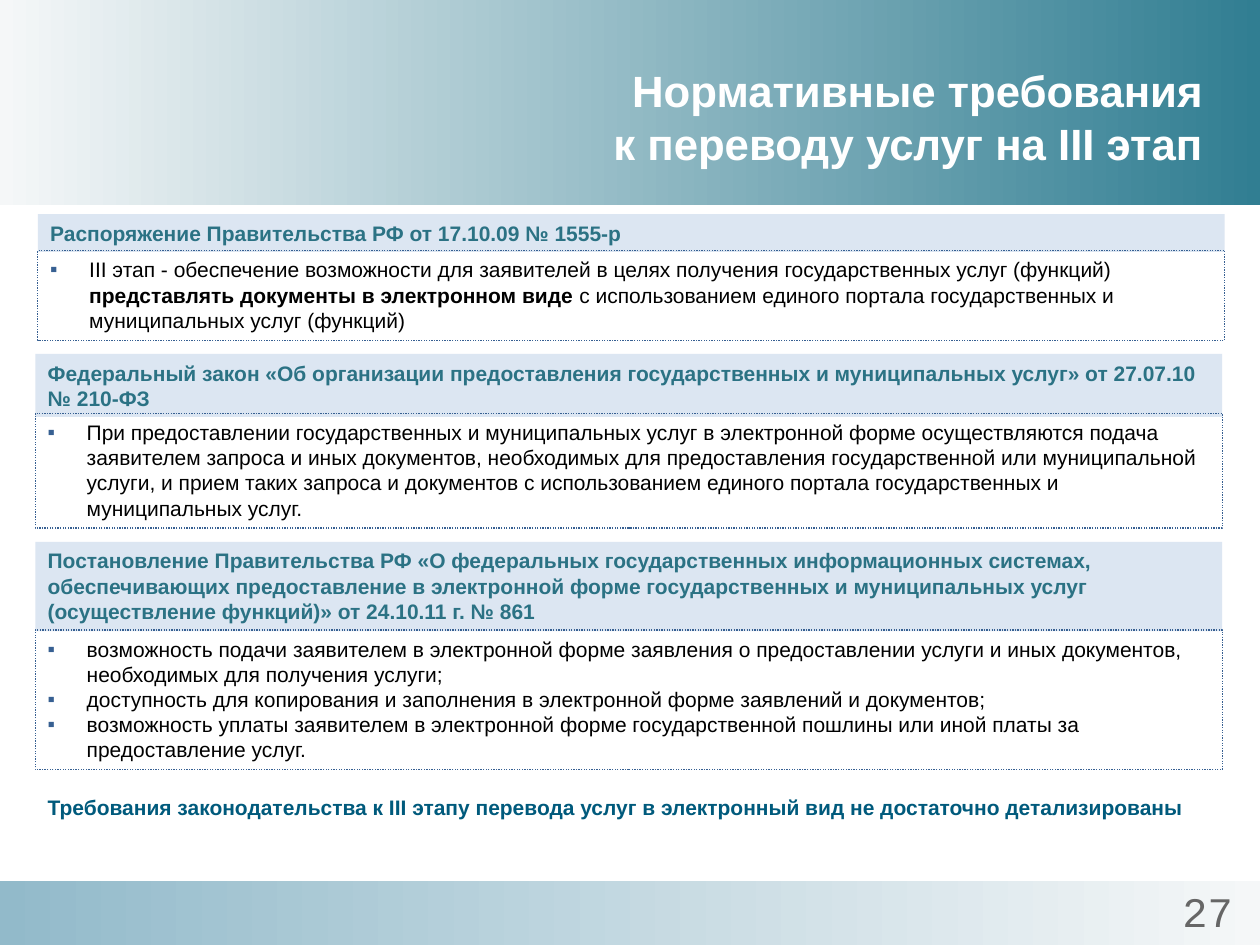
from lxml.etree import SubElement
from pptx import Presentation
from pptx.dml.color import RGBColor
from pptx.enum.dml import MSO_LINE
from pptx.enum.shapes import MSO_SHAPE
from pptx.enum.text import MSO_ANCHOR, PP_ALIGN
from pptx.oxml.ns import qn
from pptx.util import Inches, Pt

COLORS = {
    "pale": "F5F7F8", "teal": "317E92", "sky": "92BACA",
    "header_fill": "DCE6F2", "header_text": "2B7284", "border": "376092",
    "body": "000000", "title": "FFFFFF", "number": "666666", "summary": "005A7C",
}
WIDTH = 9.42

# left, header top, header height, body top, body height, header, bullets of (text, bold) runs
SECTIONS = [
    (0.3, 1.7, 0.3, 1.99, 0.71,
     "Распоряжение Правительства РФ от 17.10.09 № 1555-р",
     [[("III этап - обеспечение возможности для заявителей в целях получения "
        "государственных услуг (функций) ", False),
       ("представлять документы в электронном виде ", True),
       ("с использованием единого портала государственных и муниципальных услуг "
        "(функций)", False)]]),
    (0.28, 2.81, 0.5, 3.28, 0.91,
     "Федеральный закон «Об организации предоставления государственных и "
     "муниципальных услуг» от 27.07.10 № 210-ФЗ",
     [[("При предоставлении государственных и муниципальных услуг в электронной форме "
        "осуществляются подача заявителем запроса и иных документов, необходимых для "
        "предоставления государственной или муниципальной услуги, и прием таких запроса "
        "и документов с использованием единого портала государственных и муниципальных "
        "услуг.", False)]]),
    (0.28, 4.3, 0.71, 5, 1.11,
     "Постановление Правительства РФ «О федеральных государственных информационных "
     "системах, обеспечивающих предоставление в электронной форме государственных и "
     "муниципальных услуг (осуществление функций)» от 24.10.11 г. № 861",
     [[("возможность подачи заявителем в электронной форме заявления о предоставлении "
        "услуги и иных документов, необходимых для получения услуги;", False)],
      [("доступность для копирования и заполнения в электронной форме заявлений и "
        "документов;", False)],
      [("возможность уплаты заявителем в электронной форме государственной пошлины или "
        "иной платы за предоставление услуг.", False)]]),
]


def rgb(name):
    return RGBColor.from_string(COLORS[name])


def add_run(paragraph, text, color, size=12, bold=False, font_name="Arial"):
    run = paragraph.add_run()
    run.text = text
    run.font.name = font_name
    run.font.size = Pt(size)
    run.font.bold = bold
    run.font.color.rgb = rgb(color)


def add_rectangle(slide, left, top, width, height):
    """Add a rectangle without shadow or line, ready for left-aligned text."""
    shape = slide.shapes.add_shape(
        MSO_SHAPE.RECTANGLE, Inches(left), Inches(top), Inches(width), Inches(height))
    shape.shadow.inherit = False
    shape.line.fill.background()
    shape.text_frame.word_wrap = True
    shape.text_frame.vertical_anchor = MSO_ANCHOR.TOP
    shape.text_frame.paragraphs[0].alignment = PP_ALIGN.LEFT
    return shape


def add_band(slide, top, height, end_color, angle):
    shape = add_rectangle(slide, 0, top, 10, height)
    shape.fill.gradient()
    shape.fill.gradient_angle = angle
    for stop, color, position in zip(shape.fill.gradient_stops, ("pale", end_color), (0, 1)):
        stop.color.rgb = rgb(color)
        stop.position = position


def add_title(slide, left, top, width, height):
    title = slide.shapes.title
    title.left, title.top = Inches(left), Inches(top)
    title.width, title.height = Inches(width), Inches(height)
    title.text_frame.vertical_anchor = MSO_ANCHOR.MIDDLE
    paragraph = title.text_frame.paragraphs[0]
    paragraph.alignment = PP_ALIGN.RIGHT
    add_run(paragraph, "Нормативные требования ", "title", 25, True)
    paragraph.add_line_break()
    add_run(paragraph, "к переводу услуг на III этап ", "title", 25, True)


def add_bullet(paragraph):
    properties = paragraph._p.get_or_add_pPr()
    properties.set("marL", str(Inches(0.31)))
    properties.set("indent", str(-Inches(0.31)))
    bullet_color = SubElement(properties, qn("a:buClr"))
    SubElement(bullet_color, qn("a:srgbClr"), val=COLORS["border"])
    SubElement(properties, qn("a:buFont"), typeface="Arial")
    SubElement(properties, qn("a:buChar"), char="▪")


def add_section(slide, left, header_top, header_height, body_top, body_height, header, bullets):
    """Add a tinted heading with a dotted box of bullets under it."""
    heading = add_rectangle(slide, left, header_top, WIDTH, header_height)
    heading.fill.solid()
    heading.fill.fore_color.rgb = rgb("header_fill")
    add_run(heading.text_frame.paragraphs[0], header, "header_text", bold=True)

    body = add_rectangle(slide, left, body_top, WIDTH, body_height)
    body.fill.background()
    body.line.color.rgb = rgb("border")
    body.line.width = Pt(0.75)
    body.line.dash_style = MSO_LINE.ROUND_DOT
    frame = body.text_frame
    for index, runs in enumerate(bullets):
        paragraph = frame.add_paragraph() if index else frame.paragraphs[0]
        paragraph.alignment = PP_ALIGN.LEFT
        add_bullet(paragraph)
        for text, bold in runs:
            add_run(paragraph, text, "body", bold=bold)


def add_label(slide, left, top, width, height, text, alignment, **style):
    box = slide.shapes.add_textbox(Inches(left), Inches(top), Inches(width), Inches(height))
    box.text_frame.word_wrap = True
    paragraph = box.text_frame.paragraphs[0]
    paragraph.alignment = alignment
    add_run(paragraph, text, **style)


def main():
    presentation = Presentation()
    presentation.slide_width, presentation.slide_height = Inches(10), Inches(7.5)
    slide = presentation.slides.add_slide(presentation.slide_layouts[5])
    add_band(slide, 0, 1.63, "teal", 0)
    add_band(slide, 6.99, 0.51, "sky", 180)
    add_title(slide, 3.81, 0.3, 5.93, 1.25)
    # The title placeholder comes first, so it is raised above the bands.
    slide.shapes._spTree.append(slide.shapes.title._element)
    add_label(slide, 9.17, 6.98, 0.83, 0.52, "27", PP_ALIGN.CENTER,
              color="number", size=24, font_name="Courier New")
    for section in SECTIONS:
        add_section(slide, *section)
    add_label(slide, 0.28, 6.26, WIDTH, 0.3,
              "Требования законодательства к III этапу перевода услуг в электронный вид "
              "не достаточно детализированы", PP_ALIGN.LEFT, color="summary", bold=True)
    presentation.save("out.pptx")


if __name__ == "__main__":
    main()
